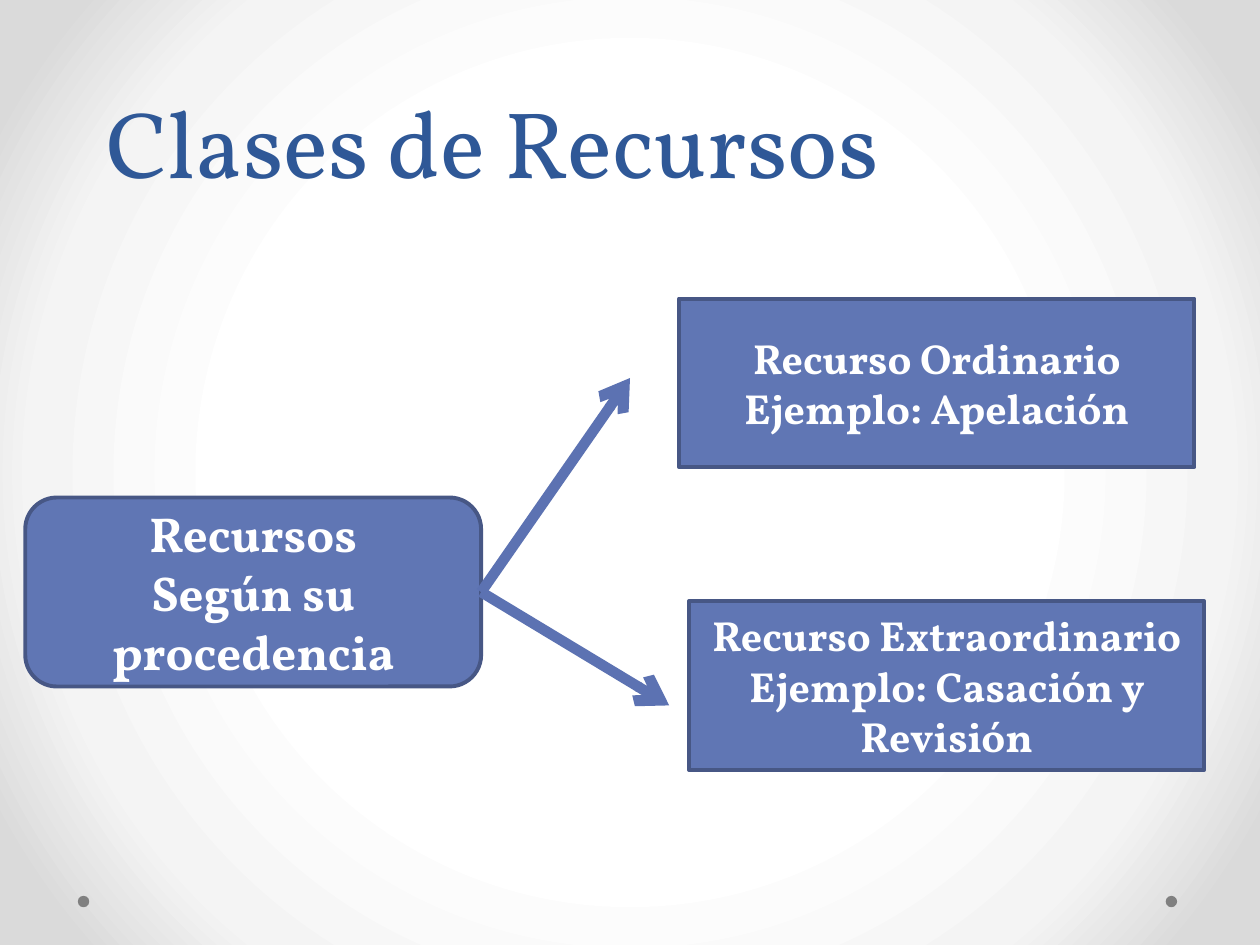
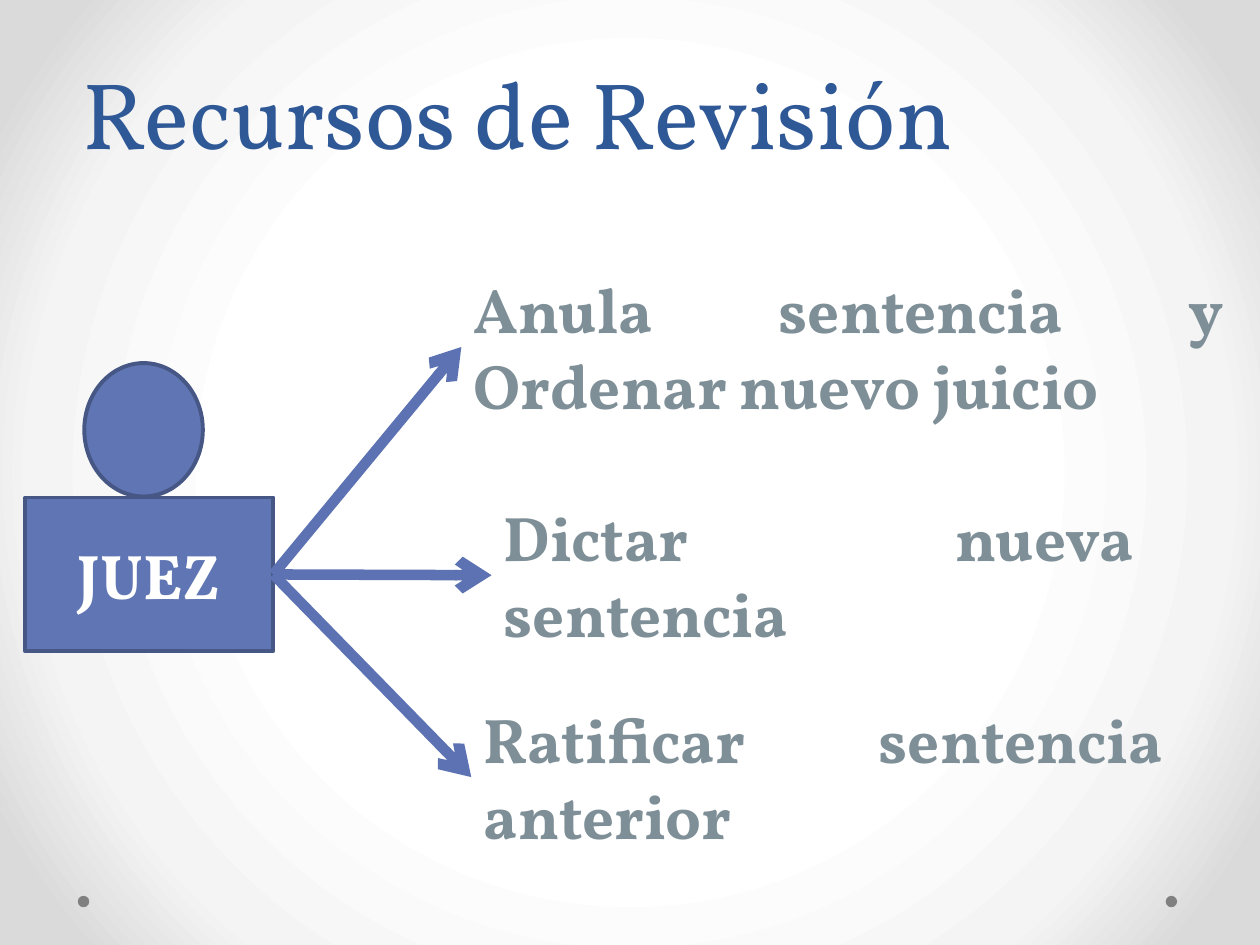
from dataclasses import dataclass
from typing import Optional

from pptx import Presentation
from pptx.dml.color import RGBColor
from pptx.enum.shapes import MSO_CONNECTOR, MSO_SHAPE
from pptx.enum.text import MSO_ANCHOR, PP_ALIGN
from pptx.oxml import parse_xml
from pptx.oxml.ns import nsdecls, qn
from pptx.oxml.xmlchemy import OxmlElement
from pptx.util import Cm, Pt

FONT = "Vollkorn"
BLUE = "6076B4"
EDGE = "475785"
ARROW = "5C72B2"
TITLE = "2F5897"
SLATE = "7E8F97"
GRAY = "808080"
WHITE = "FFFFFF"
GLOW = [(50, WHITE), (76, "F4F4F4"), (92, "DADADA")]


@dataclass
class Area:
    left: float
    top: float
    width: float
    height: float

    def cm(self) -> list:
        return [Cm(v) for v in (self.left, self.top, self.width, self.height)]


@dataclass
class Block:
    area: Area
    text: str = ""
    size: int = 24
    kind: MSO_SHAPE = MSO_SHAPE.RECTANGLE
    fill: str = BLUE
    edge: Optional[str] = EDGE


@dataclass
class Label:
    area: Area
    text: str


def paint(target, color: str) -> None:
    target.solid()
    target.fore_color.rgb = RGBColor.from_string(color)


def write(shape, text: str, *, size: int, color: str = WHITE, bold: bool = True,
          align=PP_ALIGN.CENTER, anchor=MSO_ANCHOR.MIDDLE, lead=None) -> None:
    frame = shape.text_frame
    frame.word_wrap = True
    frame.vertical_anchor = anchor
    frame.text = text
    for para in frame.paragraphs:
        para.alignment = align
        if lead:
            para.line_spacing = Pt(lead)
        font = para.font
        font.name, font.size, font.bold = FONT, Pt(size), bold
        paint(font.fill, color)


def draw_block(slide, block: Block):
    shape = slide.shapes.add_shape(block.kind, *block.area.cm())
    shape.shadow.inherit = False
    paint(shape.fill, block.fill)
    if block.edge:
        paint(shape.line.fill, block.edge)
        shape.line.width = Pt(2.25)
    else:
        shape.line.fill.background()
    if block.text:
        write(shape, block.text, size=block.size)
    return shape


def draw_label(slide, label: Label):
    box = slide.shapes.add_textbox(*label.area.cm())
    write(box, label.text, size=36, color=SLATE,
          align=PP_ALIGN.JUSTIFY, anchor=MSO_ANCHOR.TOP)
    return box


def draw_arrow(slide, start, goal=None, tip=(0, 0)) -> None:
    x, y = (Cm(v) for v in tip)
    line = slide.shapes.add_connector(MSO_CONNECTOR.STRAIGHT, 0, 0, x, y)
    line.begin_connect(start, 3)
    if goal is not None:
        line.end_connect(goal, 1)
    paint(line.line.fill, ARROW)
    line.line.width = Pt(6)
    head = OxmlElement("a:tailEnd")
    head.set("type", "arrow")
    props = line.element.spPr
    props.find(qn("a:ln")).append(head)
    props.append(OxmlElement("a:effectLst"))


def set_glow(master) -> None:
    paint(master.background.fill, WHITE)
    stops = "".join(f'<a:gs pos="{pos * 1000}"><a:srgbClr val="{color}"/></a:gs>'
                    for pos, color in GLOW)
    grad = parse_xml(
        f'<a:gradFill {nsdecls("a")} rotWithShape="1"><a:gsLst>{stops}</a:gsLst>'
        '<a:path path="circle"><a:fillToRect l="50000" t="50000" r="50000" b="50000"/>'
        '</a:path></a:gradFill>')
    props = master.element.find(".//" + qn("p:bgPr"))
    props.replace(props.find(qn("a:solidFill")), grad)


def add_slide(deck, title: str, area: Area):
    slide = deck.slides.add_slide(deck.slide_layouts[6])
    for left in (23.5, 1.57):
        draw_block(slide, Block(Area(left, 18.06, 0.23, 0.23), kind=MSO_SHAPE.OVAL,
                                fill=GRAY, edge=None))
    box = slide.shapes.add_textbox(*area.cm())
    write(box, title, size=54, color=TITLE, bold=False,
          anchor=MSO_ANCHOR.BOTTOM, lead=58)
    return slide


def add_types(deck) -> None:
    slide = add_slide(deck, "Clases de Recursos", Area(0.3, 1.19, 19.25, 2.92))
    root = draw_block(slide, Block(Area(0.51, 10.03, 9.19, 3.81),
                                   "Recursos\nSegún su procedencia", 28,
                                   MSO_SHAPE.ROUNDED_RECTANGLE))
    for tip in ((12.7, 7.62), (13.49, 14.22)):
        draw_arrow(slide, root, tip=tip)
    for left, top, text in (
        (13.69, 6.02, "Recurso Ordinario\nEjemplo: Apelación"),
        (13.89, 12.12, "Recurso Extraordinario\nEjemplo: Casación y Revisión"),
    ):
        draw_block(slide, Block(Area(left, top, 10.39, 3.4), text))


def add_review(deck) -> None:
    slide = add_slide(deck, "Recursos de Revisión", Area(-0.1, 0.81, 21.06, 2.72))
    judge = draw_block(slide, Block(Area(0.51, 10.03, 5, 3.1), "JUEZ", 36))
    draw_block(slide, Block(Area(1.7, 7.32, 2.39, 2.69),
                            kind=MSO_SHAPE.FLOWCHART_CONNECTOR))
    labels = [
        Label(Area(9.3, 5.33, 15.6, 3.33), "Anula sentencia y Ordenar nuevo juicio"),
        Label(Area(9.91, 9.93, 13.21, 3.33), "Dictar nueva sentencia"),
        Label(Area(9.5, 14, 14.2, 3.33), "Ratificar sentencia anterior"),
    ]
    for box in [draw_label(slide, label) for label in labels]:
        draw_arrow(slide, judge, box)


def main() -> None:
    deck = Presentation()
    deck.slide_width, deck.slide_height = Cm(25.4), Cm(19.05)
    set_glow(deck.slide_master)
    add_types(deck)
    add_review(deck)
    deck.save("out.pptx")


if __name__ == "__main__":
    main()
